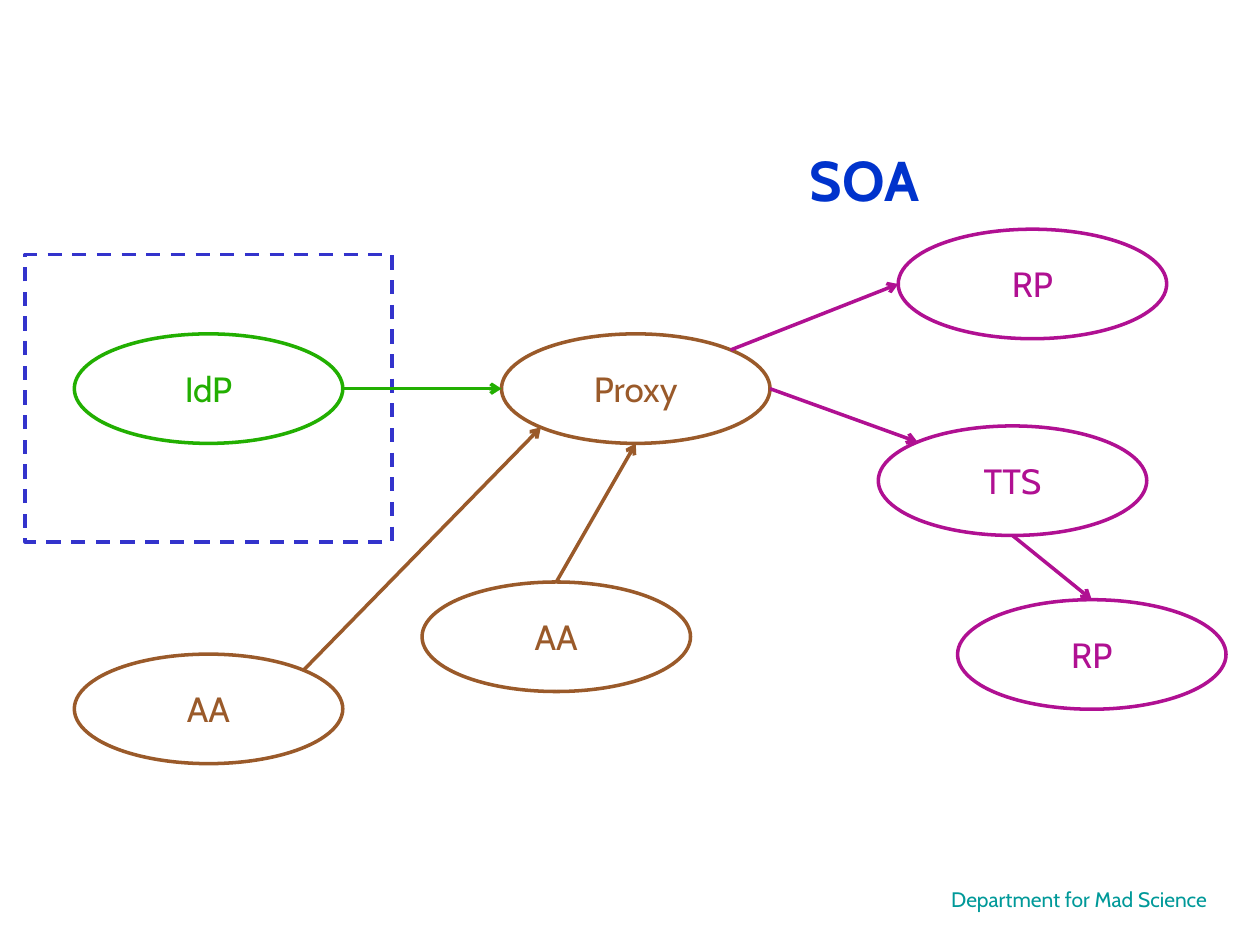
from math import cos, radians, sin

from pptx import Presentation
from pptx.dml.color import RGBColor
from pptx.enum.dml import MSO_LINE_DASH_STYLE as DASH
from pptx.enum.shapes import MSO_CONNECTOR as CONNECTOR, MSO_SHAPE as SHAPE
from pptx.enum.text import MSO_ANCHOR as ANCHOR, PP_ALIGN as ALIGN
from pptx.oxml.ns import qn
from pptx.util import Pt
from lxml.etree import SubElement

FONT = "Cabin"
GREEN, BROWN, PURPLE = "22AF01", "9A5A2A", "B01092"
NODE_W, NODE_H = 153.4, 62.6

# Name: (label, colour, left, top), relative to the diagram
NODES = {
    "idp": ("IdP", GREEN, 28.1, 59.8),
    "proxy": ("Proxy", BROWN, 272.2, 59.8),
    "aa_near": ("AA", BROWN, 226.8, 201.6),
    "aa_far": ("AA", BROWN, 28.1, 242.8),
    "tts": ("TTS", PURPLE, 487.5, 112.4),
    "rp_top": ("RP", PURPLE, 498.9, 0),
    "rp_bottom": ("RP", PURPLE, 532.8, 211.7),
}
# Start node, angle on its rim, end node, angle on its rim (clockwise from right)
LINKS = [
    ("idp", 0, "proxy", 180),
    ("aa_far", 315, "proxy", 135),
    ("aa_near", 270, "proxy", 90),
    ("proxy", 0, "tts", 225),
    ("proxy", 315, "rp_top", 180),
    ("tts", 90, "rp_bottom", 270),
]


def rgb(value):
    return RGBColor.from_string(value)


def write(sp, text, size, color, bold=False):
    tf = sp.text_frame
    tf.text = text
    tf.word_wrap = True
    tf.vertical_anchor = ANCHOR.MIDDLE
    p = tf.paragraphs[0]
    p.alignment = ALIGN.CENTER
    font = p.runs[0].font
    font.name, font.size, font.bold = FONT, Pt(size), bold
    font.color.rgb = rgb(color)


def add_outline(slide, shape, left, top, width, height, color):
    sp = slide.shapes.add_shape(shape, Pt(left), Pt(top), Pt(width), Pt(height))
    sp.shadow.inherit = False
    sp.fill.solid()
    sp.fill.fore_color.rgb = rgb("FFFFFF")
    sp.line.color.rgb = rgb(color)
    sp.line.width = Pt(2)
    return sp


def rim_point(left, top, angle):
    a = radians(angle)
    return (Pt(left + NODE_W / 2 * (1 + cos(a))),
            Pt(top + NODE_H / 2 * (1 + sin(a))))


def add_arrow(slide, start, end, color):
    line = slide.shapes.add_connector(CONNECTOR.STRAIGHT, *start, *end)
    line.line.color.rgb = rgb(color)
    line.line.width = Pt(2)
    sp_pr = line._element.spPr
    SubElement(sp_pr.find(qn("a:ln")), qn("a:tailEnd"), type="arrow")
    SubElement(sp_pr, qn("a:effectLst"))


def add_title(slide, left, top, width, height):
    sp = slide.shapes.title
    sp.left, sp.top, sp.width, sp.height = map(Pt, (left, top, width, height))
    write(sp, "SOA", 32, "0033CC", bold=True)


def add_diagram(slide, left, top):
    # Dashed home domain
    domain = add_outline(slide, SHAPE.RECTANGLE, left, top + 14.4, 209.5, 164.2, "3333CC")
    domain.line.dash_style = DASH.DASH

    # Nodes
    for label, color, x, y in NODES.values():
        sp = add_outline(slide, SHAPE.OVAL, left + x, top + y, NODE_W, NODE_H, color)
        write(sp, label, 20, color)

    # Arrows: purple towards the services, otherwise the colour of the source
    for source, out_angle, target, in_angle in LINKS:
        _, source_color, x1, y1 = NODES[source]
        _, target_color, x2, y2 = NODES[target]
        color = PURPLE if target_color == PURPLE else source_color
        add_arrow(slide, rim_point(left + x1, top + y1, out_angle),
                  rim_point(left + x2, top + y2, in_angle), color)


def add_footer(slide, left, top, width, height):
    sp = slide.shapes.add_textbox(Pt(left), Pt(top), Pt(width), Pt(height))
    write(sp, "Department for Mad Science", 12, "009999")


def main():
    prs = Presentation()
    prs.slide_width, prs.slide_height = Pt(720), Pt(540)
    slide = prs.slides.add_slide(prs.slide_layouts[5])
    add_title(slide, 280.8, 60.5, 426.2, 84.2)
    add_diagram(slide, 14.4, 131)
    add_footer(slide, 513.4, 503.3, 206.6, 21.6)
    prs.save("out.pptx")


if __name__ == "__main__":
    main()
